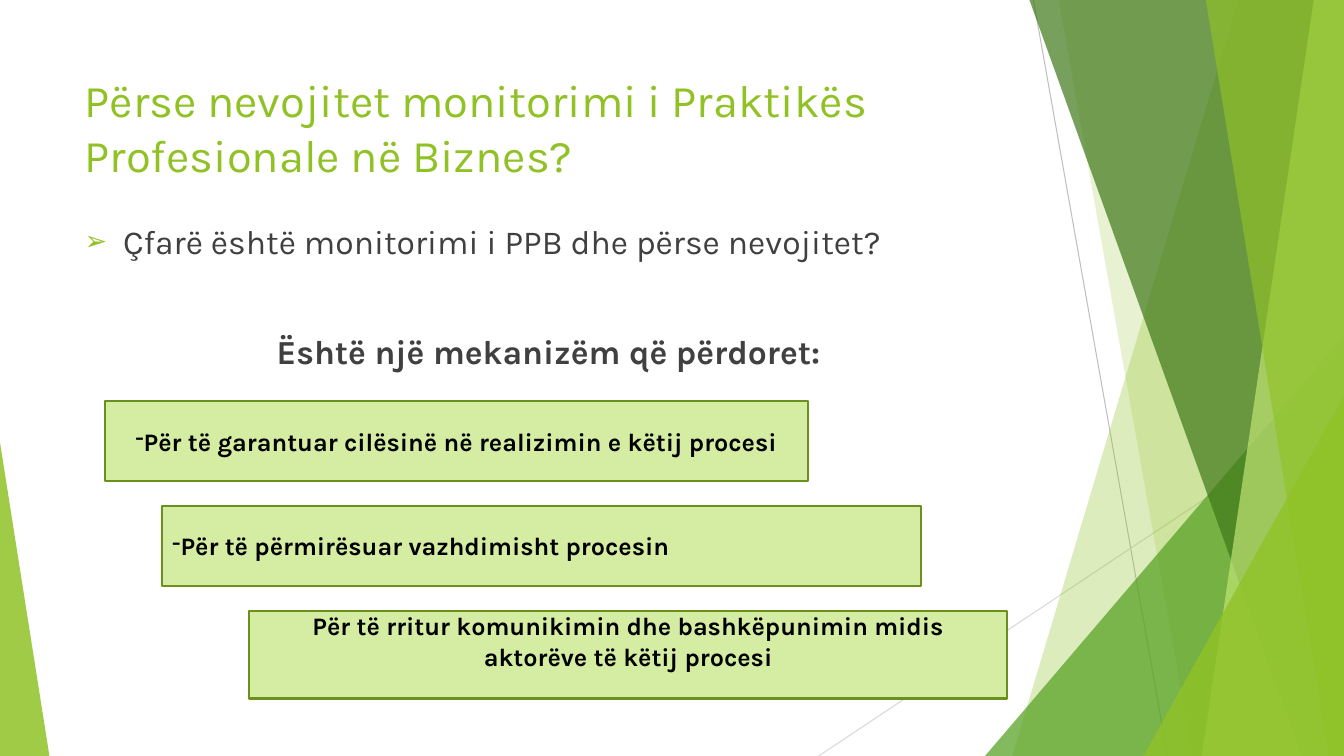
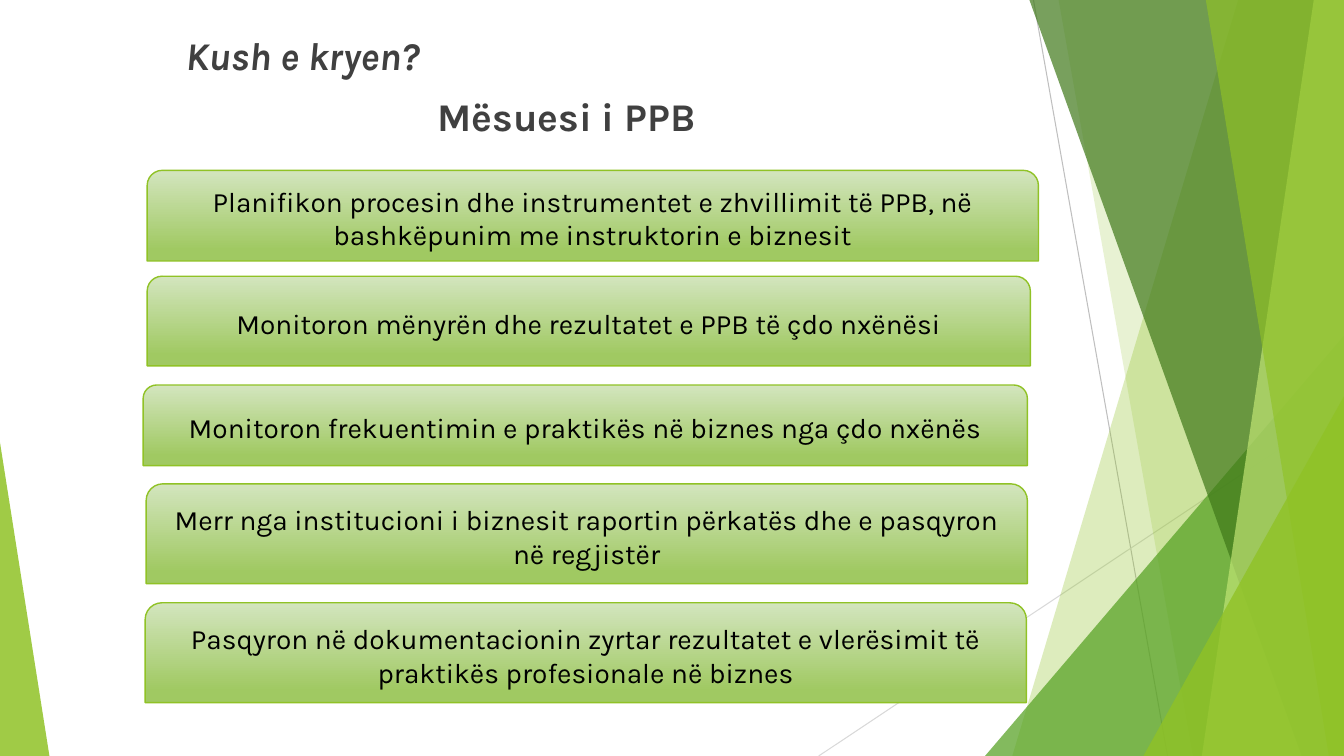
from lxml import etree
from pptx import Presentation
from pptx.dml.color import RGBColor
from pptx.enum.shapes import MSO_CONNECTOR, MSO_SHAPE, PP_PLACEHOLDER
from pptx.enum.text import MSO_ANCHOR, MSO_AUTO_SIZE, PP_ALIGN
from pptx.oxml.ns import qn
from pptx.util import Inches, Pt

GREEN = RGBColor(0x90, 0xC2, 0x26)
MID_GREEN = RGBColor(0x54, 0xA0, 0x21)
DARK_GREEN = RGBColor(0x3F, 0x78, 0x19)
LIME = RGBColor(0xC0, 0xE4, 0x74)
PALE_GREEN = RGBColor(0xD5, 0xED, 0xA2)
OLIVE = RGBColor(0x6B, 0x90, 0x1C)
GRADIENT_TOP = RGBColor(0xD3, 0xE5, 0xBE)
GRADIENT_BOTTOM = RGBColor(0xA0, 0xC9, 0x62)
GREY = RGBColor(0xBF, 0xBF, 0xBF)
LIGHT_GREY = RGBColor(0xD9, 0xD9, 0xD9)
TEXT_GREY = RGBColor(0x40, 0x40, 0x40)
BLACK = RGBColor(0, 0, 0)
FONT = "Karla"
WIDTH, HEIGHT = 13.33, 7.5


def write(paragraph, text, size, color, align=PP_ALIGN.LEFT, **font_format):
    paragraph.alignment = align
    paragraph.line_spacing = 1.0
    run = paragraph.add_run()
    run.text = text
    run.font.color.rgb = color
    for name, value in {"name": FONT, "size": Pt(size), **font_format}.items():
        setattr(run.font, name, value)


def set_list_format(paragraph, bullet=None, left=0, hanging=0, color=None, percent=100):
    """Set indents and the bullet; call after the paragraph spacing is set."""
    properties = paragraph._p.get_or_add_pPr()
    properties.set("marL", str(Inches(left)))
    properties.set("indent", str(-Inches(hanging)))
    if bullet is None:
        etree.SubElement(properties, qn("a:buNone"))
        return
    if color is not None:
        bullet_color = etree.SubElement(properties, qn("a:buClr"))
        etree.SubElement(bullet_color, qn("a:srgbClr"), val=str(color))
    etree.SubElement(properties, qn("a:buSzPct"), val=str(percent * 1000))
    etree.SubElement(properties, qn("a:buChar"), char=bullet)


presentation = Presentation()
presentation.slide_width = Inches(WIDTH)
presentation.slide_height = Inches(HEIGHT)
master = presentation.slide_master
layout = presentation.slide_layouts.get_by_name("Title and Content")

# Title and body areas shared through the master
for kind, area in (
    (PP_PLACEHOLDER.TITLE, (0.74, 0.67, 9.4, 1.17)),
    (PP_PLACEHOLDER.BODY, (0.74, 2.14, 9.4, 4.99)),
):
    placeholder = master.placeholders.get(kind)
    for name, value in zip(("left", "top", "width", "height"), area):
        setattr(placeholder, name, Inches(value))
    placeholder.text_frame.vertical_anchor = MSO_ANCHOR.TOP

why_slide = presentation.slides.add_slide(layout)
who_slide = presentation.slides.add_slide(layout)

# Facet background: built on a slide, then moved to the master
shapes = why_slide.shapes
decorations = []
for start, end, color in (
    ((10.25, 0), (11.58, HEIGHT), GREY),
    ((WIDTH, 4.03), (8.12, HEIGHT), LIGHT_GREY),
):
    line = shapes.add_connector(MSO_CONNECTOR.STRAIGHT, *map(Inches, start + end))
    line.line.color.rgb = color
    line.line.width = Pt(0.75)
    etree.SubElement(line.element.spPr, qn("a:effectLst"))
    decorations.append(line)

# Bands: x at the top, x at the bottom. Triangles: left, top, width, apex.
for geometry, color, opacity in (
    ((12.28, 10.04), GREEN, 30),
    ((10.5, 11.83), GREEN, 20),
    ((9.77, 3.33, 3.56, 1), MID_GREEN, 72),
    ((10.21, 12.91), DARK_GREEN, 70),
    ((13.03, 11.92), LIME, 70),
    ((11.96, 13.18), GREEN, 65),
    ((11.34, 3.93, 1.99, 1), GREEN, 80),
    ((0, 4.39, 0.49, 0), GREEN, 85),
):
    if len(geometry) == 2:
        top_x, bottom_x = geometry
        outline = shapes.build_freeform(Inches(top_x), 0)
        corners = ((WIDTH, 0), (WIDTH, HEIGHT), (bottom_x, HEIGHT))
        outline.add_line_segments([(Inches(x), Inches(y)) for x, y in corners])
        facet = outline.convert_to_shape()
    else:
        left, top, width, apex = geometry
        facet = shapes.add_shape(
            MSO_SHAPE.ISOSCELES_TRIANGLE,
            *map(Inches, (left, top, width, HEIGHT - top)),
        )
        facet.adjustments[0] = apex
    facet.shadow.inherit = False
    facet.line.fill.background()
    facet.fill.solid()
    facet.fill.fore_color.rgb = color
    fill_color = facet.element.spPr.find(".//" + qn("a:srgbClr"))
    etree.SubElement(fill_color, qn("a:alpha"), val=str(opacity * 1000))
    decorations.append(facet)

first_placeholder = next(iter(master.placeholders)).element
for shape_id, decoration in enumerate(decorations, start=101):
    decoration.element.find(".//" + qn("p:cNvPr")).set("id", str(shape_id))
    first_placeholder.addprevious(decoration.element)

# Slide 1: why monitoring is needed
write(
    why_slide.shapes.title.text_frame.paragraphs[0],
    "Përse nevojitet monitorimi i Praktikës Profesionale në Biznes?",
    32.4, GREEN,
)
body = why_slide.placeholders[1].text_frame
body.auto_size = MSO_AUTO_SIZE.NONE
question = body.paragraphs[0]
write(question, "Çfarë është monitorimi i PPB dhe përse nevojitet?", 24, TEXT_GREY)
question.space_before = Pt(10)
set_list_format(question, "➢", 0.38, 0.38, GREEN, 80)
answer = body.add_paragraph()
write(answer, "Është një mekanizëm që përdoret:", 24, TEXT_GREY, PP_ALIGN.CENTER, bold=True)
answer.space_before = Pt(50)
set_list_format(answer)

for area, text, align, bullet in (
    ((1.04, 3.98, 6.97, 0.79),
     "Për të garantuar cilësinë në realizimin e këtij procesi", PP_ALIGN.CENTER, "-"),
    ((1.61, 5.02, 7.53, 0.79),
     "Për të përmirësuar vazhdimisht procesin", PP_ALIGN.LEFT, "-"),
    ((2.47, 6.06, 7.52, 0.87),
     "Për të rritur komunikimin dhe bashkëpunimin midis aktorëve të këtij procesi",
     PP_ALIGN.CENTER, None),
):
    purpose = why_slide.shapes.add_shape(MSO_SHAPE.RECTANGLE, *map(Inches, area))
    purpose.shadow.inherit = False
    purpose.fill.solid()
    purpose.fill.fore_color.rgb = PALE_GREEN
    purpose.line.color.rgb = OLIVE
    purpose.line.width = Pt(1.5)
    frame = purpose.text_frame
    frame.word_wrap = True
    frame.vertical_anchor = MSO_ANCHOR.MIDDLE
    if bullet is None:
        frame.vertical_anchor = MSO_ANCHOR.TOP
        frame.margin_top = 0
    write(frame.paragraphs[0], text, 18, BLACK, align, bold=True)
    set_list_format(frame.paragraphs[0], bullet)

# Slide 2: who carries it out
title = who_slide.shapes.title.element
title.getparent().remove(title)
heading = who_slide.placeholders[1]
for name, value in {"left": 0.74, "top": 0.26, "width": 10.27, "height": 6.71}.items():
    setattr(heading, name, Inches(value))
body = heading.text_frame
body.auto_size = MSO_AUTO_SIZE.NONE
for paragraph, text, indent, italic in (
    (body.paragraphs[0], "Kush e kryen?", 1, True),
    (body.add_paragraph(), "Mësuesi i PPB", 3.5, False),
):
    write(paragraph, text, 28, TEXT_GREY, bold=True, italic=italic)
    paragraph.space_before = Pt(10)
    set_list_format(paragraph, left=indent)

for area, text in (
    ((1.46, 1.69, 8.84, 0.9),
     "Planifikon procesin dhe instrumentet e zhvillimit të PPB, në bashkëpunim me instruktorin e biznesit"),
    ((1.46, 2.74, 8.76, 0.89),
     "Monitoron mënyrën dhe rezultatet e PPB të çdo nxënësi"),
    ((1.42, 3.82, 8.77, 0.8),
     "Monitoron frekuentimin e praktikës në biznes nga çdo nxënës"),
    ((1.45, 4.8, 8.74, 0.99),
     "Merr nga institucioni i biznesit raportin përkatës dhe e pasqyron në regjistër"),
    ((1.44, 5.98, 8.74, 0.99),
     "Pasqyron në dokumentacionin zyrtar rezultatet e vlerësimit të praktikës profesionale në biznes"),
):
    duty = who_slide.shapes.add_shape(MSO_SHAPE.ROUND_2_SAME_RECTANGLE, *map(Inches, area))
    duty.shadow.inherit = False
    duty.fill.gradient()
    duty.fill.gradient_angle = 270
    stops = ((0, GRADIENT_TOP), (0.88, GRADIENT_BOTTOM))
    for stop, (position, color) in zip(duty.fill.gradient_stops, stops):
        stop.position = position
        stop.color.rgb = color
    duty.line.color.rgb = GREEN
    duty.line.width = Pt(1)
    duty.text_frame.word_wrap = True
    duty.text_frame.vertical_anchor = MSO_ANCHOR.MIDDLE
    write(duty.text_frame.paragraphs[0], text, 20, BLACK, PP_ALIGN.CENTER)

presentation.save("out.pptx")
